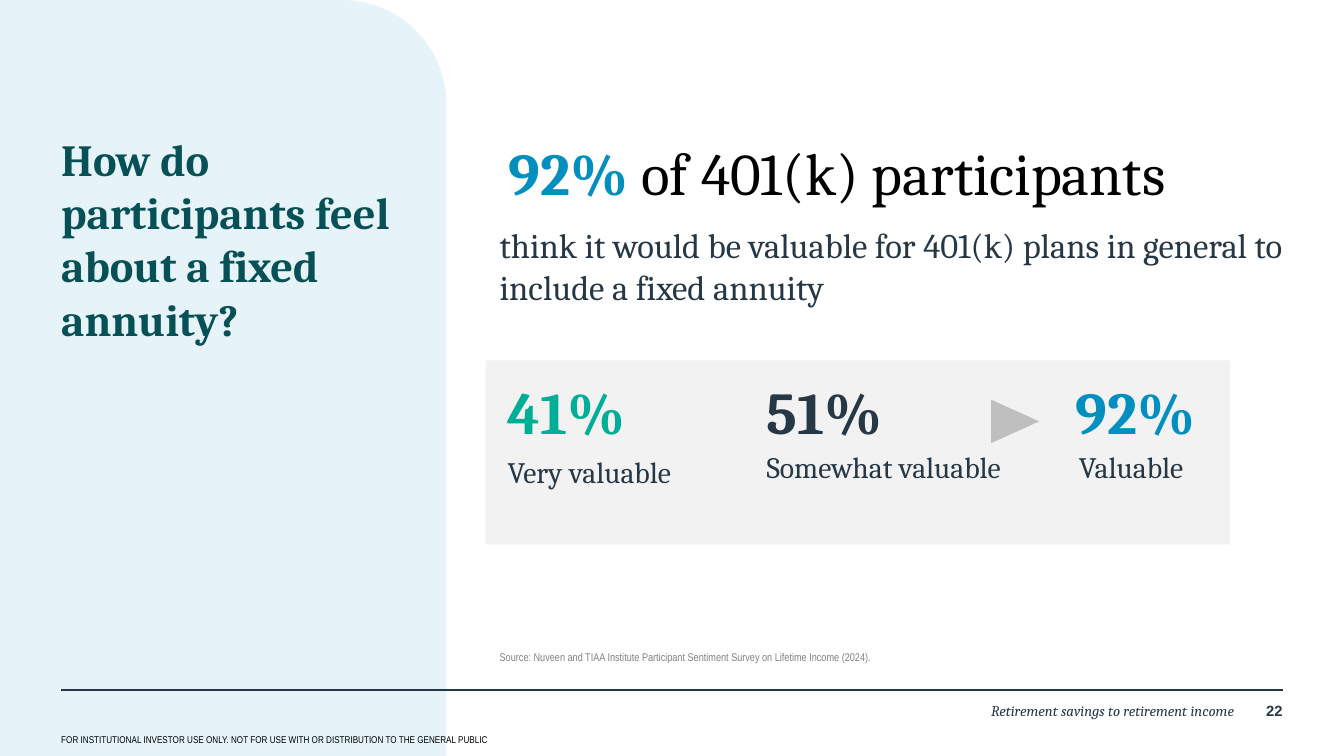
from pptx import Presentation
from pptx.dml.color import RGBColor
from pptx.enum.shapes import MSO_CONNECTOR, MSO_SHAPE
from pptx.enum.text import MSO_ANCHOR, PP_ALIGN
from pptx.oxml.ns import qn
from pptx.util import Cm, Pt
from lxml.etree import SubElement

WIDTH, HEIGHT = 38.38, 21.59
LEFT, RIGHT = 1.75, 36.63
INK, BLUE, GREEN, TEAL = "263746", "008FBE", "00AD97", "075156"

BODY = {"name": "Cambria", "size": Pt(28), "color": INK}
LABEL = {**BODY, "size": Pt(24)}
TITLE = {**BODY, "size": Pt(36), "bold": True, "color": TEAL}
LEAD = {**BODY, "size": Pt(48), "color": "000000"}
FIGURE = {**LEAD, "bold": True}
DECK = {**BODY, "size": Pt(12), "italic": True}
PAGE = {"name": "Arial", "size": Pt(12), "bold": True, "color": INK}
SOURCE = {"name": "Arial Narrow", "size": Pt(9), "color": "808080"}
NOTICE = {**SOURCE, "size": Pt(8), "color": "000000"}


def color(code):
    return RGBColor.from_string(code)


def style(font, format):
    for key, value in format.items():
        if key == "color":
            font.color.rgb = color(value)
        else:
            setattr(font, key, value)


def write(slide, box, runs, align=PP_ALIGN.LEFT, anchor=MSO_ANCHOR.TOP):
    frame = slide.shapes.add_textbox(*map(Cm, box)).text_frame
    layout = {"word_wrap": True, "vertical_anchor": anchor, "margin_left": 0,
              "margin_right": 0, "margin_top": 0, "margin_bottom": 0}
    for key, value in layout.items():
        setattr(frame, key, value)
    line = frame.paragraphs[0]
    line.alignment = align
    for text, format in runs:
        run = line.add_run()
        run.text = text
        style(run.font, format)


def draw(slide, kind, box, fill):
    shape = slide.shapes.add_shape(kind, *map(Cm, box))
    shape.shadow.inherit = False
    shape.fill.solid()
    shape.fill.fore_color.rgb = color(fill)
    shape.line.fill.background()
    return shape


def add_panel(slide, box):
    x, y, wide, high = box
    panel = draw(slide, MSO_SHAPE.ROUND_1_RECTANGLE, box, "E6F4F9")
    panel.adjustments[0] = 0.234
    write(slide, (x + LEFT, y + 3.76, wide - 2.97, 7.7),
          [("How do participants feel about a fixed annuity?", TITLE)])


def add_footer(slide, box):
    x, y, wide, high = box
    rule = slide.shapes.add_connector(
        MSO_CONNECTOR.STRAIGHT, Cm(x), Cm(y), Cm(x + wide), Cm(y))
    rule.line.color.rgb = color(INK)
    rule.line.width = Pt(2)
    SubElement(rule.element.spPr, qn("a:effectLst"))
    write(slide, (x + 11.76, y + 0.33, wide - 13.14, 1),
          [("Retirement savings to retirement income", DECK)], PP_ALIGN.RIGHT)
    write(slide, (x + wide - 1, y + 0.33, 1, 0.84), [("22", PAGE)], PP_ALIGN.RIGHT)
    write(slide, (x, y + 1.25, 27.5, 0.4),
          [("FOR INSTITUTIONAL INVESTOR USE ONLY. NOT FOR USE WITH OR "
            "DISTRIBUTION TO THE GENERAL PUBLIC", NOTICE)])


def add_finding(slide, box):
    x, y, wide, high = box
    write(slide, (x + 0.25, y + 0.13, wide - 1.6, 2.05),
          [("92% ", {**FIGURE, "color": BLUE}), ("of 401(k) participants", LEAD)])
    write(slide, (x, y + 2.64, wide, 2.6),
          [("think it would be valuable for 401(k) plans in general to "
            "include a fixed annuity", BODY)])
    write(slide, (x, y + high - 1.04, wide, 1.04),
          [("Source: Nuveen and TIAA Institute Participant Sentiment Survey "
            "on Lifetime Income (2024).", SOURCE)], anchor=MSO_ANCHOR.BOTTOM)


def add_card(slide, box):
    x, y, wide, high = box
    draw(slide, MSO_SHAPE.RECTANGLE, box, "F2F2F2")
    stats = [
        ("41%", "Very valuable", GREEN, 0.63, 0, 2.66),
        ("51%", "Somewhat valuable", INK, 8.02, 0, 2.54),
        ("92%", "Valuable", BLUE, 16.84, 0.1, 2.54),
    ]
    for figure, label, tint, left, shift, drop in stats:
        write(slide, (x + left, y + 0.43, 5, 1.37),
              [(figure, {**FIGURE, "color": tint})])
        write(slide, (x + left + shift, y + drop, 7.2, 0.8), [(label, LABEL)])
    arrow = draw(slide, MSO_SHAPE.ISOSCELES_TRIANGLE,
                 (x + 14.5, y + 1.06, 1.24, 1.37), "BFBFBF")
    arrow.rotation = 90


def main():
    deck = Presentation()
    deck.slide_width, deck.slide_height = Cm(WIDTH), Cm(HEIGHT)
    slide = deck.slides.add_slide(deck.slide_layouts[6])
    add_panel(slide, (0, 0, 12.75, HEIGHT))
    add_footer(slide, (LEFT, 19.71, RIGHT - LEFT, HEIGHT - 19.71))
    add_finding(slide, (14.27, 3.76, RIGHT - 14.27, 15.19))
    add_card(slide, (13.87, 10.29, 21.26, 5.26))
    deck.save("out.pptx")


if __name__ == "__main__":
    main()
